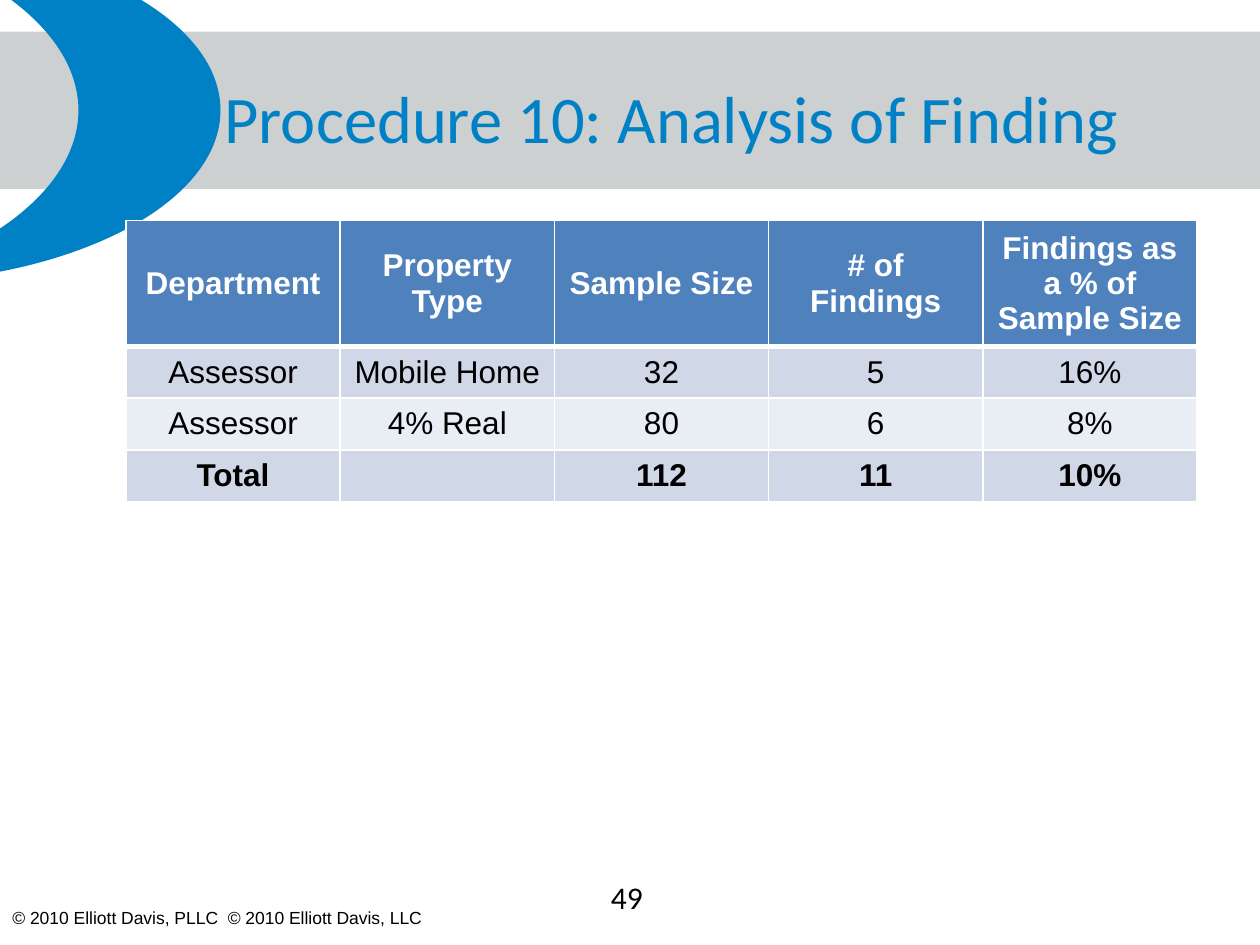
from pptx import Presentation
from pptx.dml.color import RGBColor
from pptx.enum.shapes import MSO_SHAPE
from pptx.enum.text import MSO_ANCHOR, PP_ALIGN
from pptx.oxml.ns import qn
from pptx.util import Inches, Pt
from lxml.etree import SubElement

BLUE = RGBColor(0x00, 0x81, 0xC6)
GRAY = RGBColor(0xC8, 0xCB, 0xCB)
BLACK = RGBColor(0x00, 0x00, 0x00)
WHITE = RGBColor(0xFF, 0xFF, 0xFF)
HEADER_FILL = RGBColor(0x4F, 0x81, 0xBD)
BAND_FILLS = (RGBColor(0xE9, 0xED, 0xF4), RGBColor(0xD0, 0xD8, 0xE8))

FINDINGS = [
    ("Department", "Property Type", "Sample Size", "# of Findings",
     "Findings as a % of Sample Size"),
    ("Assessor", "Mobile Home", "32", "5", "16%"),
    ("Assessor", "4% Real", "80", "6", "8%"),
    ("Total", "", "112", "11", "10%"),
]
COLUMN_WIDTH = 1.7
HEADER_HEIGHT = 0.94
ROW_HEIGHT = 0.41


def add_background_shape(slide, kind, box, color):
    shape = slide.shapes.add_shape(kind, *map(Inches, box))
    shape.shadow.inherit = False
    shape.fill.solid()
    shape.fill.fore_color.rgb = color
    shape.line.fill.background()
    return shape


def set_opacity(shape, percent):
    color = shape.fill._xPr.find(qn("a:solidFill"))[0]
    SubElement(color, qn("a:alpha"), val=str(percent * 1000))


def write_text(frame, text, color, align=PP_ALIGN.LEFT, **font_format):
    paragraph = frame.paragraphs[0]
    paragraph.alignment = align
    if not text:
        return
    run = paragraph.add_run()
    run.text = text
    run.font.color.rgb = color
    for name, value in font_format.items():
        setattr(run.font, name, value)


def add_text(slide, box, text, color, anchor=MSO_ANCHOR.TOP, **text_format):
    frame = slide.shapes.add_textbox(*map(Inches, box)).text_frame
    frame.word_wrap = True
    frame.vertical_anchor = anchor
    write_text(frame, text, color, **text_format)


def set_borders(cell, widths):
    """Draw white cell borders; widths maps each side's tag to points."""
    properties = cell._tc.get_or_add_tcPr()
    for position, (tag, width) in enumerate(widths.items()):
        line = properties.makeelement(qn(tag), {"w": str(Pt(width))})
        fill = SubElement(line, qn("a:solidFill"))
        SubElement(fill, qn("a:srgbClr"), val=str(WHITE))
        properties.insert(position, line)  # borders come before the fill


def add_findings_table(slide, left, top):
    row_count, column_count = len(FINDINGS), len(FINDINGS[0])
    height = HEADER_HEIGHT + ROW_HEIGHT * (row_count - 1)
    table = slide.shapes.add_table(
        row_count, column_count, Inches(left), Inches(top),
        Inches(COLUMN_WIDTH * column_count), Inches(height)).table
    for column in table.columns:
        column.width = Inches(COLUMN_WIDTH)
    for index, values in enumerate(FINDINGS):
        header = index == 0
        table.rows[index].height = Inches(HEADER_HEIGHT if header else ROW_HEIGHT)
        for cell, text in zip(table.rows[index].cells, values):
            cell.vertical_anchor = MSO_ANCHOR.MIDDLE
            cell.fill.solid()
            cell.fill.fore_color.rgb = HEADER_FILL if header else BAND_FILLS[index % 2]
            set_borders(cell, {"a:lnL": 1, "a:lnR": 1,
                               "a:lnT": 3 if index == 1 else 1,
                               "a:lnB": 3 if header else 1})
            write_text(cell.text_frame, text, WHITE if header else BLACK,
                       PP_ALIGN.CENTER, name="Arial", size=Pt(18),
                       bold=index in (0, row_count - 1))


def main():
    presentation = Presentation()
    presentation.slide_width = Inches(10)
    presentation.slide_height = Inches(7.5)
    slide = presentation.slides.add_slide(presentation.slide_layouts[6])

    band = add_background_shape(slide, MSO_SHAPE.RECTANGLE, (0, 0.25, 10, 1.25), GRAY)
    set_opacity(band, 90)
    crescent = add_background_shape(slide, MSO_SHAPE.MOON, (-1, -0.5, 2.75, 2.75), BLUE)
    crescent.rotation = 180
    crescent.adjustments[0] = 0.41

    add_text(slide, (0, 7.15, 3.58, 0.27),
             "© 2010 Elliott Davis, PLLC  © 2010 Elliott Davis, LLC",
             BLACK, name="Arial", size=Pt(10))
    add_text(slide, (0.83, 0.3, 9, 1.25), "Procedure 10: Analysis of Finding",
             BLUE, MSO_ANCHOR.MIDDLE, align=PP_ALIGN.CENTER,
             name="Calibri", size=Pt(38))
    add_findings_table(slide, 1, 1.75)
    add_text(slide, (4.75, 6.92, 0.5, 0.4), "49", BLACK, name="Calibri", size=Pt(18))

    presentation.save("out.pptx")


if __name__ == "__main__":
    main()
